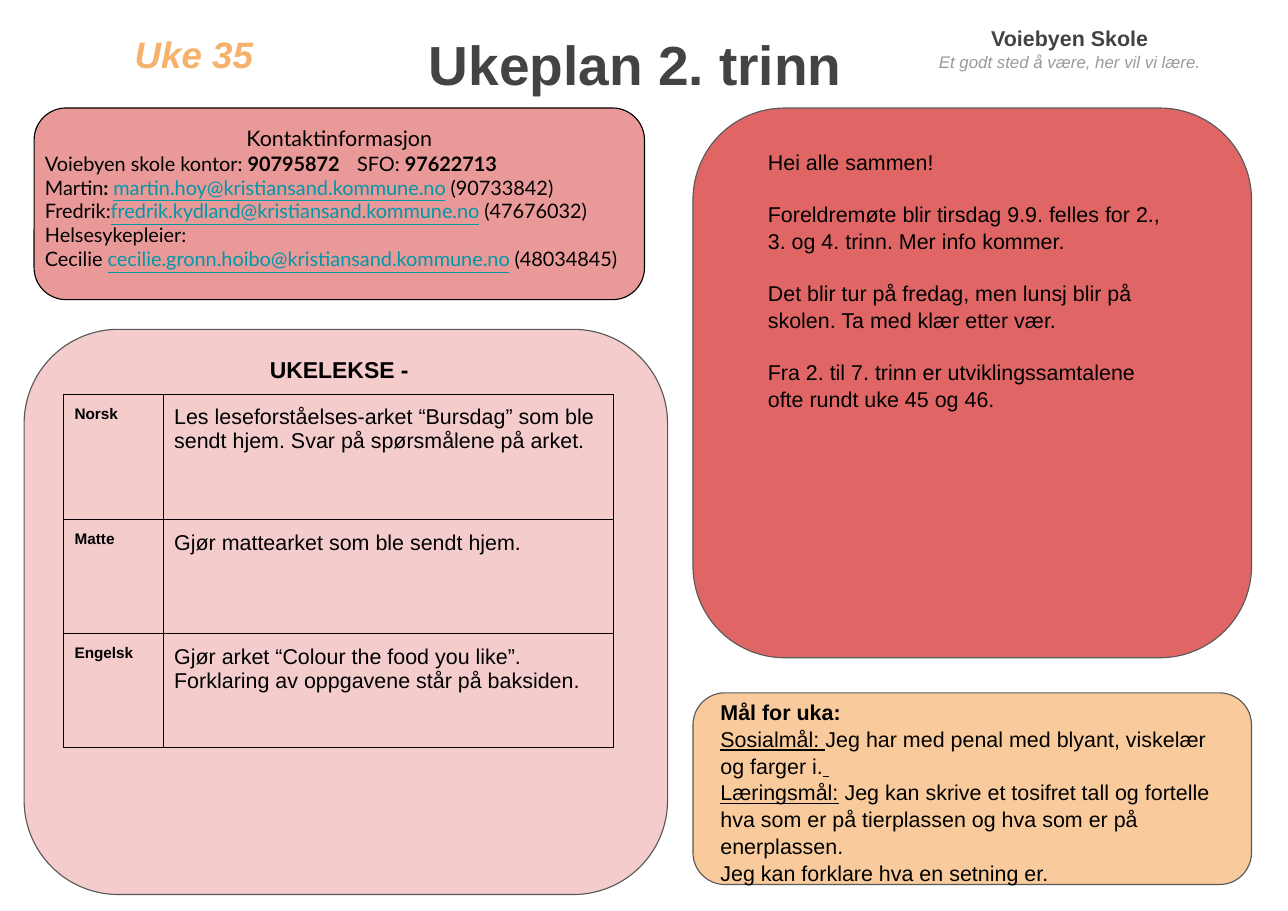
from lxml import etree
from pptx import Presentation
from pptx.dml.color import RGBColor
from pptx.enum.shapes import MSO_SHAPE
from pptx.enum.text import MSO_ANCHOR, PP_ALIGN
from pptx.oxml.ns import qn
from pptx.util import Pt

CENTER = PP_ALIGN.CENTER
LEFT = PP_ALIGN.LEFT
TOP = MSO_ANCHOR.TOP
PANEL = MSO_SHAPE.FLOWCHART_ALTERNATE_PROCESS
TITLE_ONLY = 5
INSET = 7.2
LEADING = 1.04
COLORS = {
    "black": "000000", "title": "434343", "motto": "999999", "week": "F6B26B",
    "link": "0097A7", "border": "595959", "contact": "EA9999",
    "homework": "F4CCCC", "message": "E06666", "goals": "F9CB9C",
}


def color(name):
    """Return a named colour."""
    return RGBColor.from_string(COLORS[name])


def set_frame(frame, wrap=True):
    """Give a text frame its insets, anchor and wrapping."""
    frame.margin_left = frame.margin_right = Pt(INSET)
    frame.margin_top = frame.margin_bottom = Pt(INSET)
    frame.vertical_anchor = TOP
    frame.word_wrap = wrap


def style(paragraph, size, tint="black", bold=False, italic=False,
          align=LEFT, font="Arial", leading=LEADING):
    """Format a whole paragraph."""
    paragraph.alignment = align
    paragraph.line_spacing = leading
    paragraph.font.name = font
    paragraph.font.size = Pt(size)
    paragraph.font.bold = bold
    paragraph.font.italic = italic
    paragraph.font.color.rgb = color(tint)


def add_runs(paragraph, runs):
    """Add (text, mark) runs, where the mark is bold, underline, link or empty."""
    for text, mark in runs:
        run = paragraph.add_run()
        run.text = text
        if mark == "bold":
            run.font.bold = True
        if mark in ("underline", "link"):
            run.font.underline = True
        if mark == "link":
            run.font.color.rgb = color("link")


def add_text(slide, box, wrap=True):
    """Add a text box and return its frame."""
    frame = slide.shapes.add_textbox(*map(Pt, box)).text_frame
    set_frame(frame, wrap)
    return frame


def next_paragraph(frame, index):
    """Return the first paragraph, or a new one after it."""
    return frame.add_paragraph() if index else frame.paragraphs[0]


def add_panel(slide, box, fill, line="border"):
    """Draw a rounded background panel."""
    shape = slide.shapes.add_shape(PANEL, *map(Pt, box))
    shape.shadow.inherit = False
    shape.fill.solid()
    shape.fill.fore_color.rgb = color(fill)
    shape.line.color.rgb = color(line)
    shape.line.width = Pt(0.75)


def add_header(slide, box):
    """Place the week, the title and the school name."""
    left, top, width, height = box
    title = slide.shapes.title
    title.left, title.top = Pt(left + 236.2), Pt(top)
    title.width, title.height = Pt(296), Pt(49.7)
    set_frame(title.text_frame)
    title.text_frame.text = "Ukeplan 2. trinn"
    style(title.text_frame.paragraphs[0], 36, "title", bold=True, leading=1.1)

    school = add_text(slide, (left + width - 237.6, top, 237.6, height))
    school.text = "Voiebyen Skole"
    style(school.paragraphs[0], 14, "title", bold=True, align=CENTER)
    motto = school.add_paragraph()
    motto.text = "Et godt sted å være, her vil vi lære."
    style(motto, 11, "motto", italic=True, align=CENTER)

    week = add_text(slide, (left, top + 3.6, 180, 42.5))
    week.text = "Uke 35"
    style(week.paragraphs[0], 24, "week", bold=True, italic=True, align=CENTER)


def add_contacts(slide, box):
    """Place the panel with contact information."""
    left, top, width, height = box
    add_panel(slide, box, "contact", "black")
    frame = add_text(slide, (left, top + 4.3, width, height))
    heading = frame.paragraphs[0]
    heading.text = "Kontaktinformasjon"
    style(heading, 14, align=CENTER, font="Lato", leading=1)
    lines = [
        [("Voiebyen skole kontor: ", ""), ("90795872", "bold"),
         ("\tSFO: ", ""), ("97622713", "bold")],
        [("Martin", ""), (": ", "bold"),
         ("martin.hoy@kristiansand.kommune.no", "link"), (" (90733842)", "")],
        [("Fredrik:", ""), ("fredrik.kydland@kristiansand.kommune.no", "link"),
         (" (47676032)", "")],
        [("Helsesykepleier:", "")],
        [("Cecilie ", ""), ("cecilie.gronn.hoibo@kristiansand.kommune.no", "link"),
         (" (48034845)", "")],
    ]
    for runs in lines:
        paragraph = frame.add_paragraph()
        if any("\t" in text for text, _ in runs):
            properties = paragraph._p.get_or_add_pPr()
            tabs = etree.SubElement(properties, qn("a:tabLst"))
            etree.SubElement(tabs, qn("a:tab"), pos=str(Pt(204)), algn="l")
        style(paragraph, 13, font="Lato", leading=1)
        add_runs(paragraph, runs)


def add_borders(cell):
    """Draw thin black lines on all sides of a cell."""
    properties = cell._tc.get_or_add_tcPr()
    for side in ("a:lnL", "a:lnR", "a:lnT", "a:lnB"):
        line = etree.SubElement(properties, qn(side), w=str(Pt(0.75)))
        fill = etree.SubElement(line, qn("a:solidFill"))
        etree.SubElement(fill, qn("a:srgbClr"), val=COLORS["black"])


def add_homework(slide, box):
    """Place the homework panel with its heading and table."""
    left, top, width, height = box
    add_panel(slide, box, "homework")
    rows = [
        ("Norsk", "Les leseforståelses-arket “Bursdag” som ble sendt hjem. "
                  "Svar på spørsmålene på arket.", 82),
        ("Matte", "Gjør mattearket som ble sendt hjem.", 74.5),
        ("Engelsk", "Gjør arket “Colour the food you like”. "
                    "Forklaring av oppgavene står på baksiden.", 74.5),
    ]
    frame = slide.shapes.add_table(
        len(rows), 2, Pt(left + 25.8), Pt(top + 42.5), Pt(359.5), Pt(231))
    table = frame.table
    table.first_row = table.horz_banding = False
    table.columns[0].width, table.columns[1].width = Pt(65), Pt(294.5)
    for index, (subject, task, row_height) in enumerate(rows):
        table.rows[index].height = Pt(row_height)
        for column, text in enumerate((subject, task)):
            cell = table.cell(index, column)
            cell.margin_left = cell.margin_right = Pt(INSET)
            cell.margin_top = cell.margin_bottom = Pt(INSET)
            add_borders(cell)
            cell.fill.solid()
            cell.fill.fore_color.rgb = color("homework")
            cell.text = text
            style(cell.text_frame.paragraphs[0], 14 if column else 10,
                  bold=column == 0, leading=1)
    heading = add_text(slide, (left + 152.6, top + 9.4, 106.6, 32.4), wrap=False)
    heading.text = "UKELEKSE -"
    style(heading.paragraphs[0], 15, bold=True, align=CENTER)


def add_message(slide, box):
    """Place the panel with the message to parents."""
    left, top, width, height = box
    add_panel(slide, box, "message")
    frame = add_text(slide, (left + 41.8, top + 18.7, width - 83.5, 303))
    messages = [
        "Hei alle sammen!",
        "Foreldremøte blir tirsdag 9.9. felles for 2., 3. og 4. trinn. Mer info kommer.",
        "Det blir tur på fredag, men lunsj blir på skolen. Ta med klær etter vær.",
        "Fra 2. til 7. trinn er utviklingssamtalene ofte rundt uke 45 og 46.",
    ]
    for index, message in enumerate(messages):
        paragraph = next_paragraph(frame, index)
        paragraph.text = message
        style(paragraph, 14)
        if index:
            paragraph.space_before = Pt(16.8)


def add_goals(slide, box):
    """Place the panel with the goals of the week."""
    left, top, width, height = box
    add_panel(slide, box, "goals")
    frame = add_text(slide, (left + 10.8, top - 3.6, width - 20.8, 150.5))
    goals = [
        [("Mål for uka:", "bold")],
        [("Sosialmål: ", "underline"),
         ("Jeg har med penal med blyant, viskelær og farger i.", ""), (" ", "underline")],
        [("Læringsmål:", "underline"),
         (" Jeg kan skrive et tosifret tall og fortelle hva som er på tierplassen "
          "og hva som er på enerplassen.", "")],
        [("Jeg kan forklare hva en setning er.", "")],
    ]
    for index, runs in enumerate(goals):
        paragraph = next_paragraph(frame, index)
        style(paragraph, 14)
        add_runs(paragraph, runs)


def main():
    """Build the weekly plan."""
    presentation = Presentation()
    presentation.slide_width, presentation.slide_height = Pt(841.68), Pt(595.44)
    slide = presentation.slides.add_slide(presentation.slide_layouts[TITLE_ONLY])
    add_header(slide, (36.7, 8.6, 781.2, 62))
    add_contacts(slide, (22.3, 70.6, 398.9, 125.3))
    add_homework(slide, (15.8, 215.3, 420.5, 369.4))
    add_message(slide, (452.9, 70.6, 365, 359.3))
    add_goals(slide, (452.9, 452.9, 365, 125.3))
    presentation.save("out.pptx")


if __name__ == "__main__":
    main()
